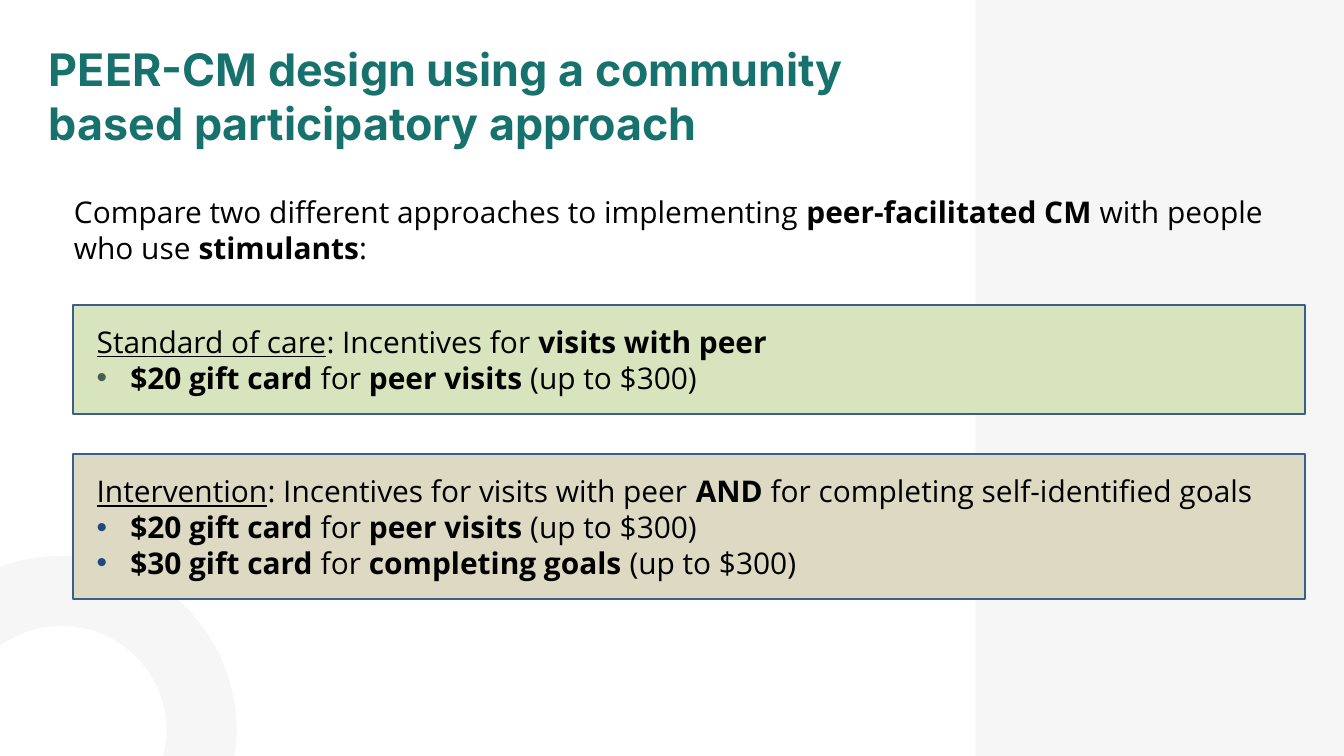
from dataclasses import dataclass

from lxml.etree import SubElement
from pptx import Presentation
from pptx.dml.color import RGBColor
from pptx.enum.shapes import MSO_SHAPE
from pptx.enum.text import MSO_ANCHOR, MSO_AUTO_SIZE, PP_ALIGN
from pptx.oxml.ns import qn
from pptx.util import Pt


@dataclass(frozen=True)
class Theme:
    title_font: str = "Inter"
    body_font: str = "Open Sans"
    title_size: int = 48
    body_size: int = 32
    teal: str = "17726D"
    black: str = "000000"
    pale_gray: str = "F6F6F6"
    green: str = "D7E4BD"
    tan: str = "DDD9C3"
    border: str = "3A5F8C"
    green_bullet: str = "455F51"
    blue_bullet: str = "1F497D"


THEME = Theme()
CARD_LEFT, CARD_WIDTH = 78.5, 1320
PEER_VISITS = [("$20 gift card ", "b"), ("for ", ""), ("peer visits ", "b"), ("(up to $300)", "")]
GOALS = [("$30 gift card ", "b"), ("for ", ""), ("completing goals ", "b"), ("(up to $300)", "")]


def color(value):
    return RGBColor.from_string(value)


def place(shape, left, top, width, height):
    shape.left, shape.top = Pt(left), Pt(top)
    shape.width, shape.height = Pt(width), Pt(height)


def set_frame(shape, anchor):
    frame = shape.text_frame
    frame.word_wrap = True
    frame.auto_size = MSO_AUTO_SIZE.NONE
    frame.vertical_anchor = anchor
    return frame


def add_runs(paragraph, runs, font_name, size, text_color):
    paragraph.alignment = PP_ALIGN.LEFT
    for text, style in runs:
        run = paragraph.add_run()
        run.text = text
        font = run.font
        font.name, font.size = font_name, Pt(size)
        font.bold, font.underline = "b" in style, "u" in style
        font.color.rgb = color(text_color)


def add_body_runs(paragraph, runs):
    add_runs(paragraph, runs, THEME.body_font, THEME.body_size, THEME.black)


def set_indent(paragraph, margin, indent=0, bullet_color=None):
    properties = paragraph._p.get_or_add_pPr()
    properties.set("marL", str(Pt(margin)))
    properties.set("indent", str(Pt(indent)))
    if bullet_color is None:
        SubElement(properties, qn("a:buNone"))
        return
    fill = SubElement(properties, qn("a:buClr"))
    SubElement(fill, qn("a:srgbClr"), val=bullet_color)
    SubElement(properties, qn("a:buFont"), typeface="Arial")
    SubElement(properties, qn("a:buChar"), char="•")


def add_plain_shape(slide, kind, bounds, fill=None, line=None, line_width=0):
    shape = slide.shapes.add_shape(kind, *map(Pt, bounds))
    shape.shadow.inherit = False
    for target, value in ((shape.fill, fill), (shape.line.fill, line)):
        if value is None:
            target.background()
        else:
            target.solid()
            target.fore_color.rgb = color(value)
    if line is not None:
        shape.line.width = Pt(line_width)
    return shape


def add_backdrop(slide):
    panel = add_plain_shape(slide, MSO_SHAPE.RECTANGLE, (1045, 0, 395, 810), fill=THEME.pale_gray)
    ring = add_plain_shape(
        slide, MSO_SHAPE.OVAL, (-83.5, 633, 299.5, 299.5), line=THEME.pale_gray, line_width=75
    )
    tree = slide.shapes._spTree
    for position, shape in enumerate((panel, ring), start=2):
        tree.insert(position, shape._element)


def fill_title(slide, text):
    title = slide.shapes.title
    place(title, 52.5, 44.5, 929.5, 116.5)
    frame = set_frame(title, MSO_ANCHOR.TOP)
    frame.margin_left = frame.margin_top = frame.margin_right = frame.margin_bottom = 0
    add_runs(frame.paragraphs[0], [(text, "b")], THEME.title_font, THEME.title_size, THEME.teal)


def fill_intro(slide, runs):
    intro = slide.placeholders[1]
    place(intro, 72, 204, 1296, 109.5)
    paragraph = set_frame(intro, MSO_ANCHOR.TOP).paragraphs[0]
    set_indent(paragraph, 0)
    add_body_runs(paragraph, runs)


def add_card(slide, top, height, fill, bullet_color, heading, items):
    bounds = (CARD_LEFT, top, CARD_WIDTH, height)
    card = add_plain_shape(slide, MSO_SHAPE.RECTANGLE, bounds, fill, THEME.border, 2)
    frame = set_frame(card, MSO_ANCHOR.MIDDLE)
    set_indent(frame.paragraphs[0], 18)
    add_body_runs(frame.paragraphs[0], heading)
    for item in items:
        paragraph = frame.add_paragraph()
        set_indent(paragraph, 54, -36, bullet_color)
        add_body_runs(paragraph, item)


def main():
    presentation = Presentation()
    presentation.slide_width, presentation.slide_height = Pt(1440), Pt(810)
    slide = presentation.slides.add_slide(presentation.slide_layouts[1])
    add_backdrop(slide)
    fill_title(slide, "PEER-CM design using a community based participatory approach")
    fill_intro(slide, [
        ("Compare two different approaches to implementing ", ""),
        ("peer-facilitated CM ", "b"),
        ("with people who use ", ""),
        ("stimulants", "b"),
        (":", ""),
    ])
    add_card(slide, 327, 116.5, THEME.green, THEME.green_bullet, [
        ("Standard of care", "u"),
        (": Incentives for ", ""),
        ("visits with peer", "b"),
    ], [PEER_VISITS])
    add_card(slide, 486.5, 155.5, THEME.tan, THEME.blue_bullet, [
        ("Intervention", "u"),
        (": Incentives for visits with peer ", ""),
        ("AND", "b"),
        (" for completing self-identified goals", ""),
    ], [PEER_VISITS, GOALS])
    presentation.save("out.pptx")


if __name__ == "__main__":
    main()
